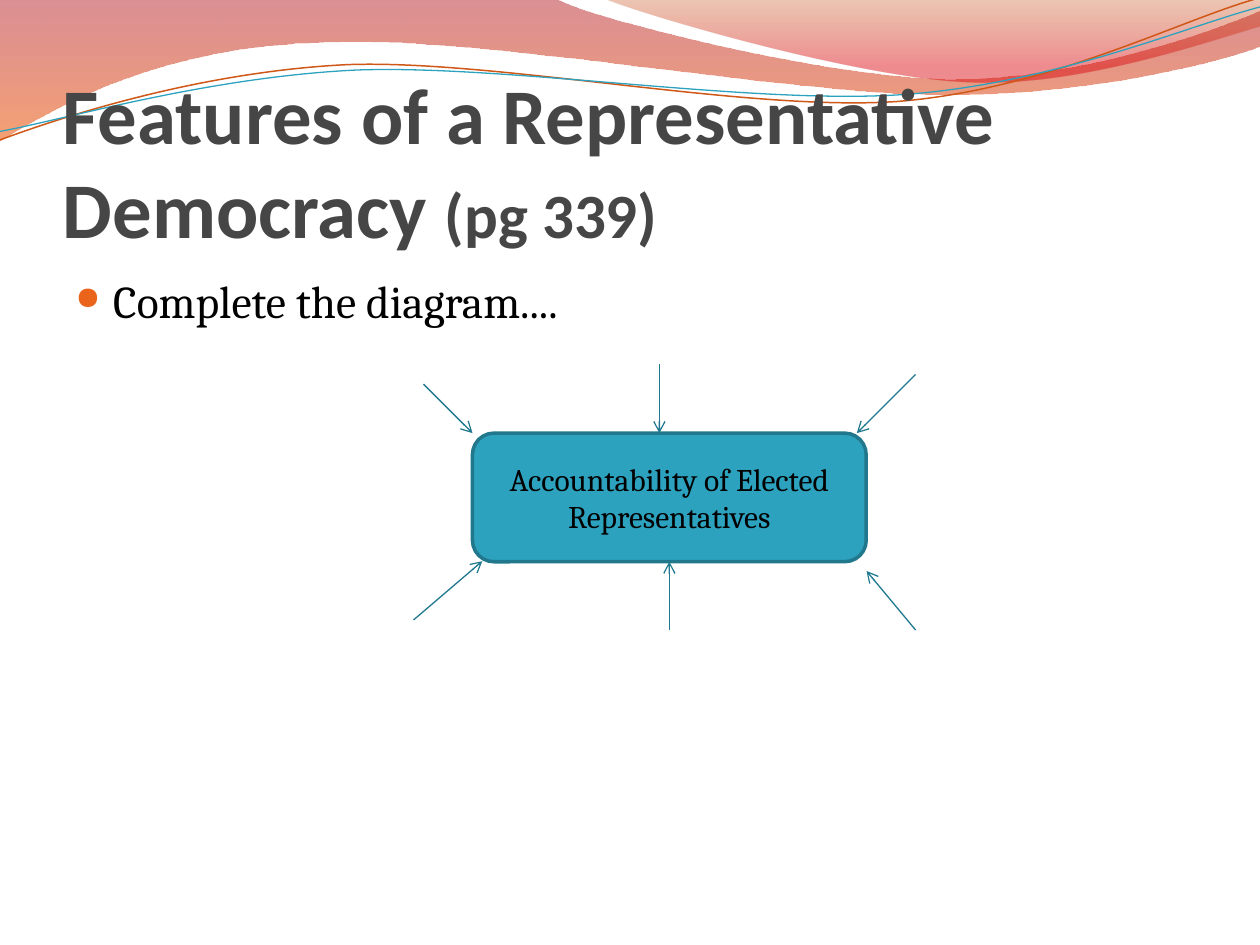
from dataclasses import dataclass

from lxml.etree import Element, SubElement
from pptx import Presentation
from pptx.dml.color import RGBColor
from pptx.enum.shapes import MSO_CONNECTOR, MSO_SHAPE
from pptx.enum.text import MSO_ANCHOR, PP_ALIGN
from pptx.oxml.ns import qn
from pptx.util import Pt


@dataclass(frozen=True)
class Theme:
    heading_font: str = "Calibri"
    body_font: str = "Cambria"
    title_size: float = 45
    page_size: float = 36
    body_size: float = 26
    box_size: float = 18
    bullet_percent: int = 70
    title: str = "464646"
    text: str = "000000"
    bullet: str = "EB641B"
    box: str = "2DA2BF"
    box_edge: str = "21788D"
    arrow: str = "20798F"
    orange_line: str = "CF5818"
    # Gradient stops: position, colour, opacity in percent
    wide_wave: tuple = ((0, "AF0911", 45), (1, "EE5300", 55))
    corner_wave: tuple = ((0, "C24400", 30), (0.8, "DC000B", 45))


def add_text(paragraph, text, *, font, size, color, bold=False):
    run = paragraph.add_run()
    run.text = text
    run.font.name = font
    run.font.size = Pt(size)
    run.font.bold = bold
    run.font.color.rgb = RGBColor.from_string(color)


class SlideBuilder:
    def __init__(self, slide, theme):
        self.shapes = slide.shapes
        self.theme = theme

    def outline(self, start, segments, closed):
        """Freeform of straight (one point) and Bezier (three points) segments."""
        builder = self.shapes.build_freeform(Pt(start[0]), Pt(start[1]))
        ends = [(Pt(x), Pt(y)) for *_, (x, y) in segments]
        builder.add_line_segments(ends, close=closed)
        shape = builder.convert_to_shape()
        shape.shadow.inherit = False
        straight_lines = list(shape._element.iter(qn("a:lnTo")))
        for line, segment in zip(straight_lines, segments):
            if len(segment) == 3:
                bezier = Element(qn("a:cubicBezTo"))
                for x, y in segment:
                    SubElement(bezier, qn("a:pt"), x=str(Pt(x) - shape.left),
                               y=str(Pt(y) - shape.top))
                line.getparent().replace(line, bezier)
        return shape

    def wave(self, start, segments, stops):
        wave = self.outline(start, segments, closed=True)
        wave.fill.gradient()
        wave.fill.gradient_angle = 270  # top to bottom
        for stop, (position, color, _) in zip(wave.fill.gradient_stops, stops):
            stop.position = position
            stop.color.rgb = RGBColor.from_string(color)
        colors = list(wave._element.spPr.iter(qn("a:srgbClr")))
        for color, (_, _, opacity) in zip(colors, stops):
            SubElement(color, qn("a:alpha")).set("val", str(opacity * 1000))
        wave.line.fill.background()

    def curve(self, start, segments, color, width):
        curve = self.outline(start, segments, closed=False)
        curve.rotation = 357.3
        curve.fill.background()
        self.stroke(curve, color, width)

    def stroke(self, shape, color, width):
        shape.line.color.rgb = RGBColor.from_string(color)
        shape.line.width = Pt(width)

    def text_frame(self, left, top, width, height):
        frame = self.shapes.add_textbox(
            Pt(left), Pt(top), Pt(width), Pt(height)).text_frame
        frame.word_wrap = True
        return frame

    def title(self, heading, page):
        theme = self.theme
        frame = self.text_frame(36, 55.5, 648, 90)
        frame.vertical_anchor = MSO_ANCHOR.BOTTOM
        frame.margin_left = frame.margin_right = frame.margin_bottom = 0
        for text, size in ((heading, theme.title_size), (page, theme.page_size)):
            add_text(frame.paragraphs[0], text, font=theme.heading_font,
                     size=size, color=theme.title, bold=True)

    def bullet(self, text):
        theme = self.theme
        paragraph = self.text_frame(36, 152.5, 648, 345.5).paragraphs[0]
        paragraph.space_before = Pt(0.2 * theme.body_size)
        add_text(paragraph, text, font=theme.body_font,
                 size=theme.body_size, color=theme.text)
        properties = paragraph._p.get_or_add_pPr()
        indent = Pt(21.6)
        properties.set("marL", str(indent))
        properties.set("indent", str(-indent))
        bullet_color = SubElement(properties, qn("a:buClr"))
        SubElement(bullet_color, qn("a:srgbClr")).set("val", theme.bullet)
        SubElement(properties, qn("a:buSzPct")).set(
            "val", str(theme.bullet_percent * 1000))
        SubElement(properties, qn("a:buChar")).set("char", "●")

    def box(self, text, left, top, width, height):
        theme = self.theme
        box = self.shapes.add_shape(MSO_SHAPE.ROUNDED_RECTANGLE,
                                    Pt(left), Pt(top), Pt(width), Pt(height))
        box.shadow.inherit = False
        box.fill.solid()
        box.fill.fore_color.rgb = RGBColor.from_string(theme.box)
        self.stroke(box, theme.box_edge, 2)
        frame = box.text_frame
        frame.word_wrap = True
        frame.vertical_anchor = MSO_ANCHOR.MIDDLE
        frame.paragraphs[0].alignment = PP_ALIGN.CENTER
        add_text(frame.paragraphs[0], text, font=theme.body_font,
                 size=theme.box_size, color=theme.text)
        return box

    def arrow(self, start, end):
        arrow = self.shapes.add_connector(
            MSO_CONNECTOR.STRAIGHT, *(Pt(value) for value in (*start, *end)))
        self.stroke(arrow, self.theme.arrow, 0.75)
        SubElement(arrow.line._get_or_add_ln(), qn("a:tailEnd")).set("type", "arrow")
        SubElement(arrow._element.spPr, qn("a:effectLst"))
        return arrow


def main():
    presentation = Presentation()
    presentation.slide_width, presentation.slide_height = Pt(720), Pt(540)
    theme = Theme()
    page = SlideBuilder(
        presentation.slides.add_slide(presentation.slide_layouts[6]), theme)

    page.wave((-0.5, -0.5), [
        [(317, -1)],
        [(343, 12), (478, 45), (546, 45)],
        [(614, 45), (690, 19), (720, 6)],
        [(721, 26)],
        [(708, 32), (626, 55), (537, 54)],
        [(448, 54), (275, 20), (185, 24)],
        [(93, 26), (33, 60), (-1, 81)],
    ], theme.wide_wave)
    page.wave((345, -1), [
        [(366, 8), (491, 45), (554, 47)],
        [(616, 50), (692, 23), (720, 15)],
        [(720, 0)],
    ], theme.corner_wave)
    page.curve((-1.4, 63), [
        [(34.2, 51.7), (114.3, 29.4), (199.4, 29.4)],
        [(284.4, 30.5), (425.8, 67.2), (512, 65.2)],
        [(599.2, 62.3), (676.1, 25.9), (720.6, 16)],
    ], theme.orange_line, 0.85)
    page.curve((-1.1, 58.1), [
        [(33.2, 53.7), (118.2, 32.6), (204.3, 32.7)],
        [(290.3, 33.7), (429.1, 63.3), (515.3, 61.4)],
        [(601.5, 59.4), (678.9, 30), (721.4, 21)],
    ], theme.box, 0.75)

    page.title("Features of a Representative Democracy ", "(pg 339)")
    page.bullet("Complete the diagram....")
    accountability = page.box("Accountability of Elected Representatives",
                              270, 247.5, 225, 73.5)
    for start, end in (
        ((242, 219.5), (270, 247.5)),
        ((376.8, 208), (376.8, 247.5)),
        ((523.2, 214), (489.6, 247.5)),
        ((236.3, 354.3), (275.6, 320.7)),
        ((523.2, 360), (495.2, 326.3)),
    ):
        page.arrow(start, end)
    page.arrow((382.5, 360), (382.5, 321)).end_connect(accountability, 2)

    presentation.save("out.pptx")


if __name__ == "__main__":
    main()
